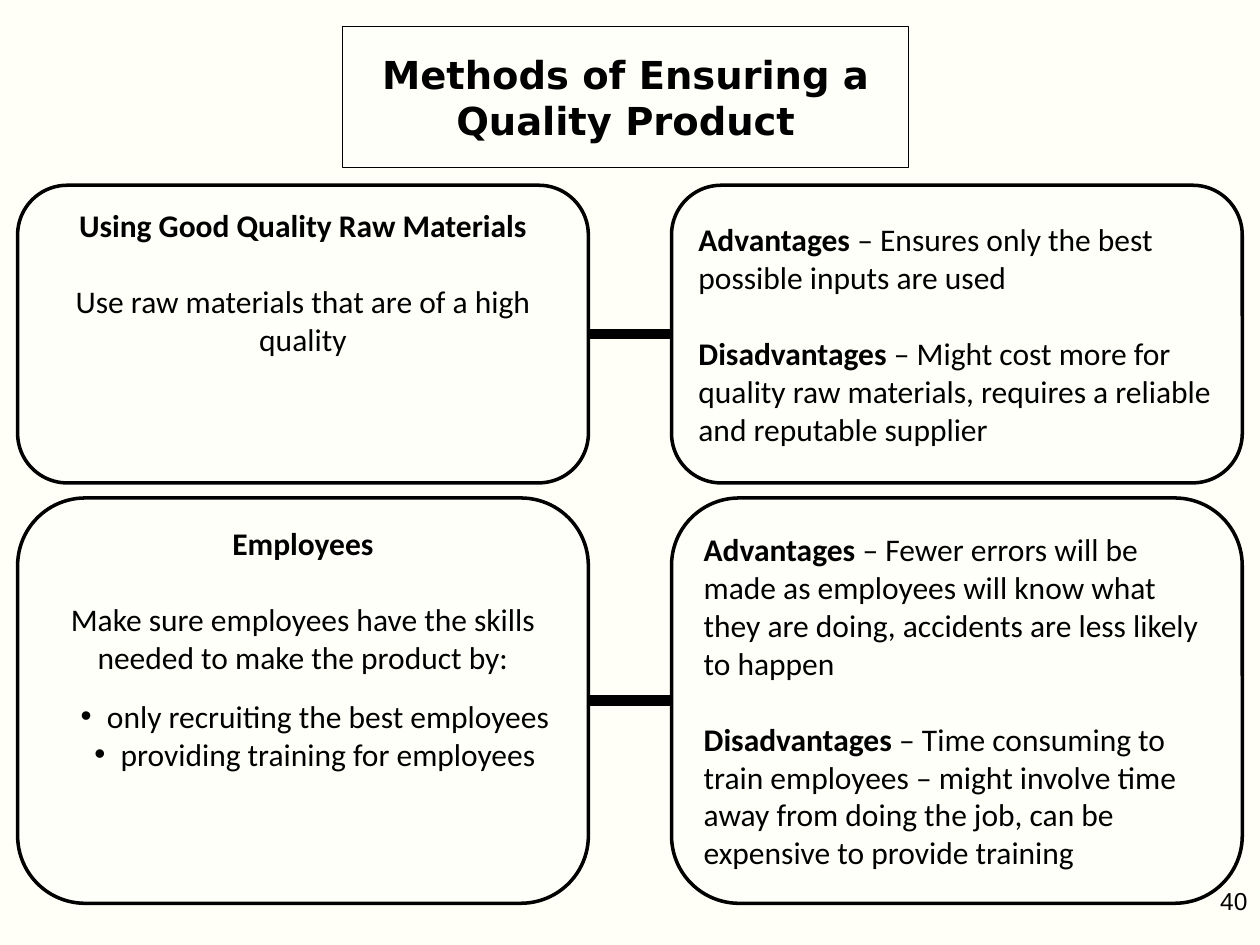
"""Build the slide on methods of ensuring a quality product."""
from dataclasses import dataclass

from lxml import etree
from pptx import Presentation
from pptx.dml.color import RGBColor
from pptx.enum.shapes import MSO_CONNECTOR, MSO_SHAPE
from pptx.enum.text import MSO_ANCHOR, MSO_AUTO_SIZE, PP_ALIGN
from pptx.oxml.ns import qn
from pptx.util import Inches, Pt

ROUNDED, STRAIGHT = MSO_SHAPE.ROUNDED_RECTANGLE, MSO_CONNECTOR.STRAIGHT
TOP, MIDDLE = MSO_ANCHOR.TOP, MSO_ANCHOR.MIDDLE
LEFT, CENTER, RIGHT = PP_ALIGN.LEFT, PP_ALIGN.CENTER, PP_ALIGN.RIGHT
COLORS = {"page": "FFFFF7", "box": "FFFFFA", "ink": "000000"}
BODY = {"name": "Calibri", "size": Pt(18)}
TITLE = {"name": "DejaVu Sans", "size": Pt(22), "bold": True}
NUMBER = {"name": "Arial", "size": Pt(14)}
WIDTH, HEIGHT = Inches(10), Inches(7.5)
MARGIN, GUTTER = 0.014, 0.066
COL_WIDTH = (1 - 2 * MARGIN - GUTTER) / 2
COLS = (MARGIN, MARGIN + COL_WIDTH + GUTTER)
LINE_GAP, HALF_GAP = 22, 12


@dataclass
class Para:
    runs: list[tuple[str, bool]]
    align: PP_ALIGN = LEFT
    after: float = 0
    bullet: bool = False


@dataclass
class Method:
    top: float
    height: float
    heading: str
    summary: str
    bullets: list[str]
    pros: str
    cons: str


METHODS = [
    Method(0.196, 0.315, "Using Good Quality Raw Materials",
           "Use raw materials that are of a high quality", [],
           "Ensures only the best possible inputs are used",
           "Might cost more for quality raw materials, requires a reliable "
           "and reputable supplier"),
    Method(0.527, 0.429, "Employees",
           "Make sure employees have the skills needed to make the product by:",
           ["only recruiting the best employees", "providing training for employees"],
           "Fewer errors will be made as employees will know what they are doing, "
           "accidents are less likely to happen",
           "Time consuming to train employees – might involve time away from "
           "doing the job, can be expensive to provide training"),
]


def rgb(key: str) -> RGBColor:
    return RGBColor.from_string(COLORS[key])


def place(x: float, y: float, w: float, h: float) -> tuple[int, ...]:
    return int(x * WIDTH), int(y * HEIGHT), int(w * WIDTH), int(h * HEIGHT)


def style_box(sp, line_width: float) -> None:
    sp.fill.solid()
    sp.fill.fore_color.rgb = rgb("box")
    sp.line.color.rgb = rgb("ink")
    sp.line.width = Pt(line_width)


def write(tf, paras: list[Para], fmt: dict, anchor: MSO_ANCHOR) -> None:
    tf.word_wrap, tf.auto_size, tf.vertical_anchor = True, MSO_AUTO_SIZE.NONE, anchor
    for i, para in enumerate(paras):
        p = tf.add_paragraph() if i else tf.paragraphs[0]
        p.alignment, p.space_after = para.align, Pt(para.after)
        if para.bullet:
            pPr = p._p.get_or_add_pPr()
            pPr.set("marL", str(Inches(0.4)))
            pPr.set("indent", str(Inches(-0.21)))
            etree.SubElement(pPr, qn("a:buFont"), typeface="Arial")
            etree.SubElement(pPr, qn("a:buChar"), char="•")
        for text, bold in para.runs:
            r = p.add_run()
            r.text = text
            for name, value in ({"bold": bold} | fmt).items():
                setattr(r.font, name, value)
            r.font.color.rgb = rgb("ink")


def add_panel(s, x: float, m: Method, paras: list[Para], anchor: MSO_ANCHOR) -> None:
    sp = s.shapes.add_shape(ROUNDED, *place(x, m.top, COL_WIDTH, m.height))
    sp.shadow.inherit = False
    style_box(sp, 2)
    write(sp.text_frame, paras, BODY, anchor)


def add_method(s, m: Method) -> None:
    verdict = [Para([("Advantages", True), (f" – {m.pros}", False)], after=LINE_GAP),
               Para([("Disadvantages", True), (f" – {m.cons}", False)])]
    outline = [Para([(m.heading, True)], CENTER, LINE_GAP),
               Para([(m.summary, False)], CENTER, HALF_GAP if m.bullets else 0)]
    outline += [Para([(text, False)], CENTER, bullet=True) for text in m.bullets]
    add_panel(s, COLS[1], m, verdict, MIDDLE)
    add_panel(s, COLS[0], m, outline, TOP)
    x, y, w, _ = place(COLS[0] + COL_WIDTH, m.top + m.height / 2, GUTTER, 0)
    link = s.shapes.add_connector(STRAIGHT, x, y, x + w, y)
    link.line.color.rgb = rgb("ink")
    link.line.width = Pt(6)
    etree.SubElement(link._element.spPr, qn("a:effectLst"))


def main() -> None:
    prs = Presentation()
    prs.slide_width, prs.slide_height = WIDTH, HEIGHT
    s = prs.slides.add_slide(prs.slide_layouts[5])
    s.background.fill.solid()
    s.background.fill.fore_color.rgb = rgb("page")

    number = s.shapes.add_textbox(*place(0.767, 0.931, 0.233, 0.069))
    write(number.text_frame, [Para([("40", False)], RIGHT)], NUMBER, TOP)
    for m in reversed(METHODS):
        add_method(s, m)

    title = s.shapes.title
    title.left, title.top, title.width, title.height = place(0.272, 0.028, 0.449, 0.149)
    style_box(title, 0.75)
    heading = Para([("Methods of Ensuring a Quality Product", True)], CENTER)
    write(title.text_frame, [heading], TITLE, MIDDLE)
    prs.save("out.pptx")


if __name__ == "__main__":
    main()
